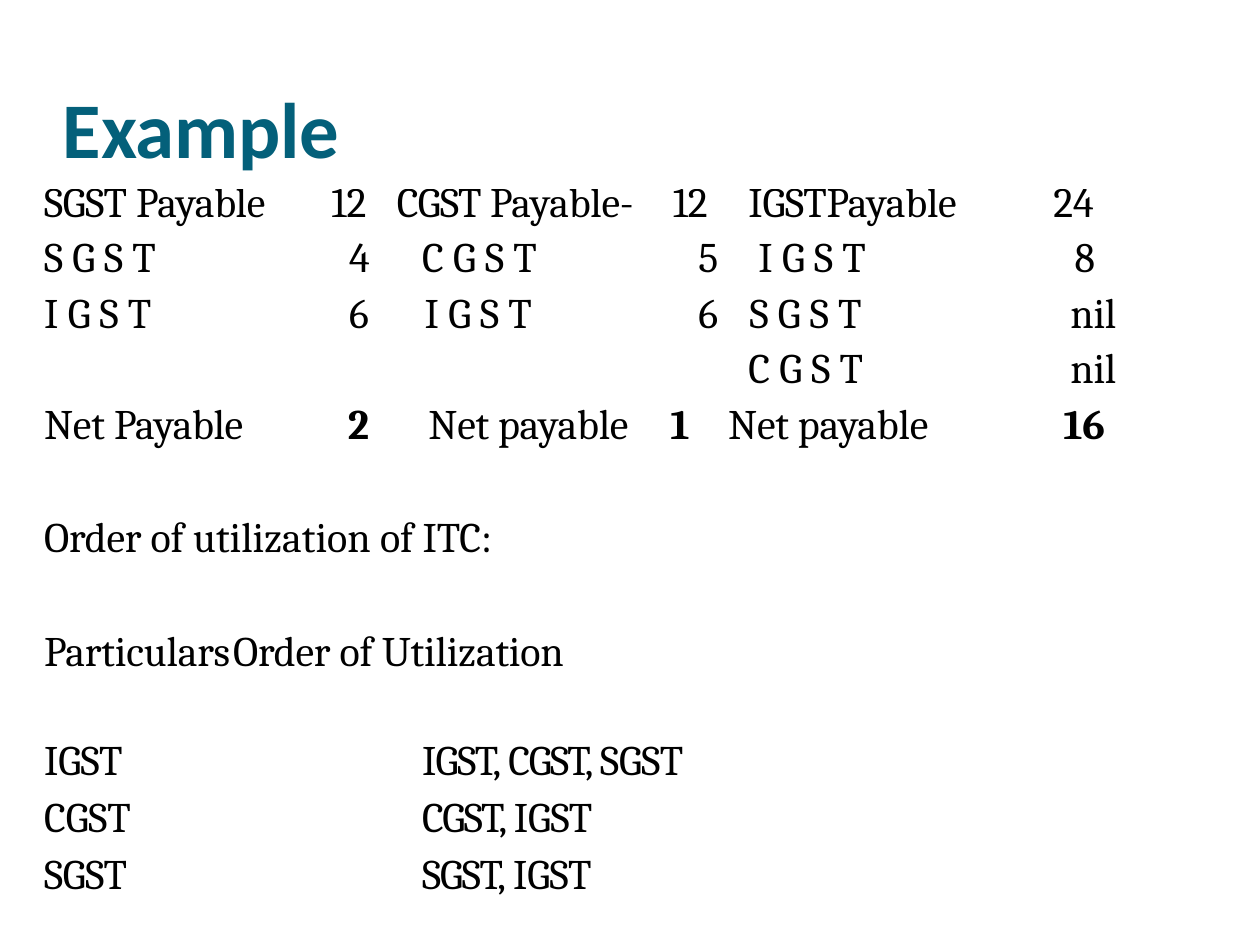
from dataclasses import dataclass

from lxml import etree
from pptx import Presentation
from pptx.dml.color import RGBColor
from pptx.enum.text import MSO_ANCHOR, PP_ALIGN
from pptx.oxml.ns import qn
from pptx.util import Inches, Pt

TOP, RIGHT = MSO_ANCHOR.TOP, PP_ALIGN.RIGHT


@dataclass(frozen=True)
class Theme:
    title_color: RGBColor = RGBColor(0x04, 0x60, 0x7A)
    text_color: RGBColor = RGBColor(0, 0, 0)
    title_font: str = "Calibri"
    text_font: str = "Cambria"
    title_size: int = 45
    text_size: int = 24


class Deck:
    def __init__(self, prs, theme):
        self.theme = theme
        self.s = prs.slides.add_slide(prs.slide_layouts[6])
        self.body = {"name": theme.text_font, "size": Pt(theme.text_size), "bold": False}
        self.heading = {"name": theme.title_font, "size": Pt(theme.title_size), "bold": True}

    def runs(self, p, parts, fmt, color):
        """Add (text, letter spacing in points) parts to a paragraph."""
        for text, spacing in parts:
            r = p.add_run()
            r.text = text
            for name, value in fmt.items():
                setattr(r.font, name, value)
            r.font.color.rgb = color
            r._r.get_or_add_rPr().set("spc", str(round(spacing * 100)))

    def indent(self, p, inches):
        pPr = p._p.get_or_add_pPr()
        pPr.set("marL", str(Inches(inches)))
        pPr.set("indent", "0")
        return pPr

    def text(self, box, paragraphs, heading=False, line=None, gap=0, tab=None):
        tf = self.s.shapes.add_textbox(*map(Inches, box)).text_frame
        frame = {"margin_left": 0, "margin_right": 0, "margin_bottom": 0,
                 "margin_top": Inches(0.02), "word_wrap": True, "vertical_anchor": TOP}
        for name, value in frame.items():
            setattr(tf, name, value)
        fmt = self.heading if heading else self.body
        color = self.theme.title_color if heading else self.theme.text_color
        for i, parts in enumerate(paragraphs):
            p = tf.add_paragraph() if i else tf.paragraphs[0]
            pPr = self.indent(p, 0.01)
            if line:
                p.line_spacing = line
            if i and gap:
                p.space_before = Pt(gap)
            if tab:
                tabs = etree.SubElement(pPr, qn("a:tabLst"))
                etree.SubElement(tabs, qn("a:tab"), pos=str(Inches(tab)), algn="l")
            self.runs(p, parts, fmt, color)

    def table(self, box, widths, heights, rows, line_heights):
        tbl = self.s.shapes.add_table(len(rows), len(widths), *map(Inches, box)).table
        tbl.first_row = tbl.horz_banding = False
        for col, width in zip(tbl.columns, widths):
            col.width = Inches(width)
        for i, (row, height) in enumerate(zip(rows, heights)):
            tbl.rows[i].height = Inches(height)
            for j, content in enumerate(row):
                cell = tbl.cell(i, j)
                cell.fill.background()
                for side in ("left", "right", "top", "bottom"):
                    setattr(cell, f"margin_{side}", 0)
                if content is None:
                    continue
                place, *parts = content
                p = cell.text_frame.paragraphs[0]
                if place is RIGHT:
                    p.alignment = RIGHT
                else:
                    self.indent(p, place)
                p.line_spacing = Pt(line_heights[i])
                # The net amounts stand out in bold
                is_net = i == len(rows) - 1 and j % 2 == 1
                self.runs(p, parts, {**self.body, "bold": is_net}, self.theme.text_color)


def main():
    prs = Presentation()
    prs.slide_width, prs.slide_height = Inches(10), Inches(7.5)
    deck = Deck(prs, Theme())

    # Title
    deck.text((0.49, 0.61, 2.23, 0.78), [[("Example", -0.1)]], heading=True)

    # Tax payable, credits and net payable; cells are (indent or RIGHT, runs)
    rows = [
        [(0.03, ("SGST ", -0.1), ("Payable", -0.2)), (0.16, ("12", 0)),
         (0.1, ("CGST ", -0.3), ("Payable-", -0.1)), (0.05, ("12", 0)),
         (0.24, ("IGSTPayable", -0.1)), (0.3, ("24", 0))],
        [(0.03, ("S G S T", 0)), (0.3, ("4", 0)), (0.3, ("C G S T", 0)),
         (RIGHT, ("5", 0)), (0.32, ("I G S T", 0)), (0.47, ("8", 0))],
        [(0.03, ("I G S T", 0)), (0.3, ("6", 0)), (0.32, ("I G S T", 0)),
         (RIGHT, ("6", 0)), (0.25, ("S G S T", 0)), (RIGHT, ("nil", -0.1))],
        [None, None, None, None, (0.24, ("C G S T", 0)), (RIGHT, ("nil", -0.1))],
        [(0.03, ("Net ", -0.1), ("Payable", -0.2)), (0.29, ("2", 0)),
         (0.35, ("Net payable", -0.1)), (0.03, ("1", 0)),
         (0.08, ("Net payable", -0.1)), (0.38, ("16", -0.1))],
    ]
    deck.table((0.32, 1.49, 8.54, 2.1), [2.15, 0.58, 2.24, 0.41, 2.36, 0.8],
               [0.39, 0.44, 0.44, 0.44, 0.39], rows, [22.8, 26.6, 26.7, 26.6, 26.6])

    # Heading and column captions of the utilization list
    deck.text((0.34, 4.03, 5.89, 1.31), [
        [("Order ", -0.1), ("of utilization of ", 0), ("ITC:", -0.1)],
        [("Particulars\tOrder ", -0.1), ("of ", 0), ("Utilization", -0.1)],
    ], gap=36.5, tab=3.01)

    # Utilization list: tax on the left, order on the right
    deck.text((0.34, 5.75, 0.84, 1.35), [
        [("IGST", -0.1)],
        [("C", -0.9), ("G", 0), ("S", -0.3), ("T", 0)],
        [("SGST", -0.1)],
    ], line=1.13)
    deck.text((3.34, 5.75, 2.61, 1.35), [
        [("IGST, ", -0.5), ("CGST, ", -0.7), ("SGST", -0.1)],
        [("CGST, ", -0.7), ("IGST", -0.1)],
        [("SGST, ", -0.5), ("IGST", -0.1)],
    ], line=1.13)

    prs.save("out.pptx")


if __name__ == "__main__":
    main()
